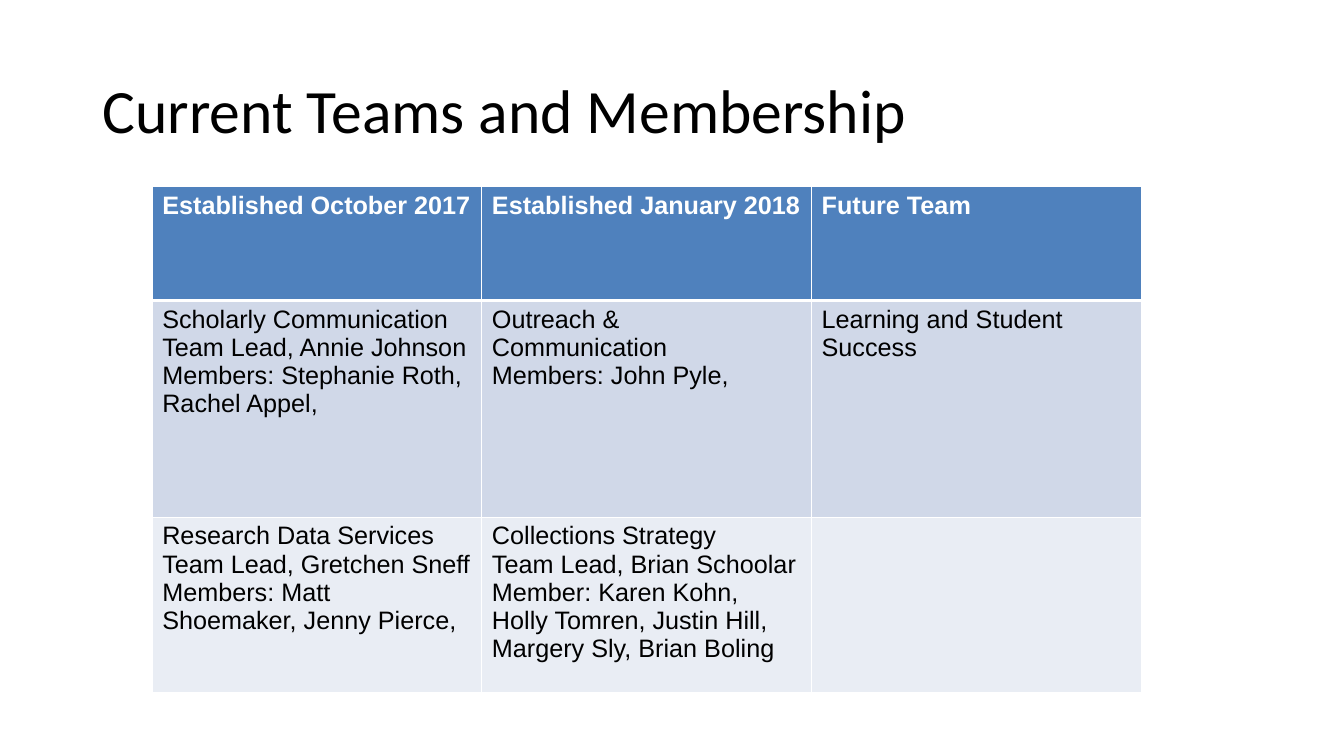
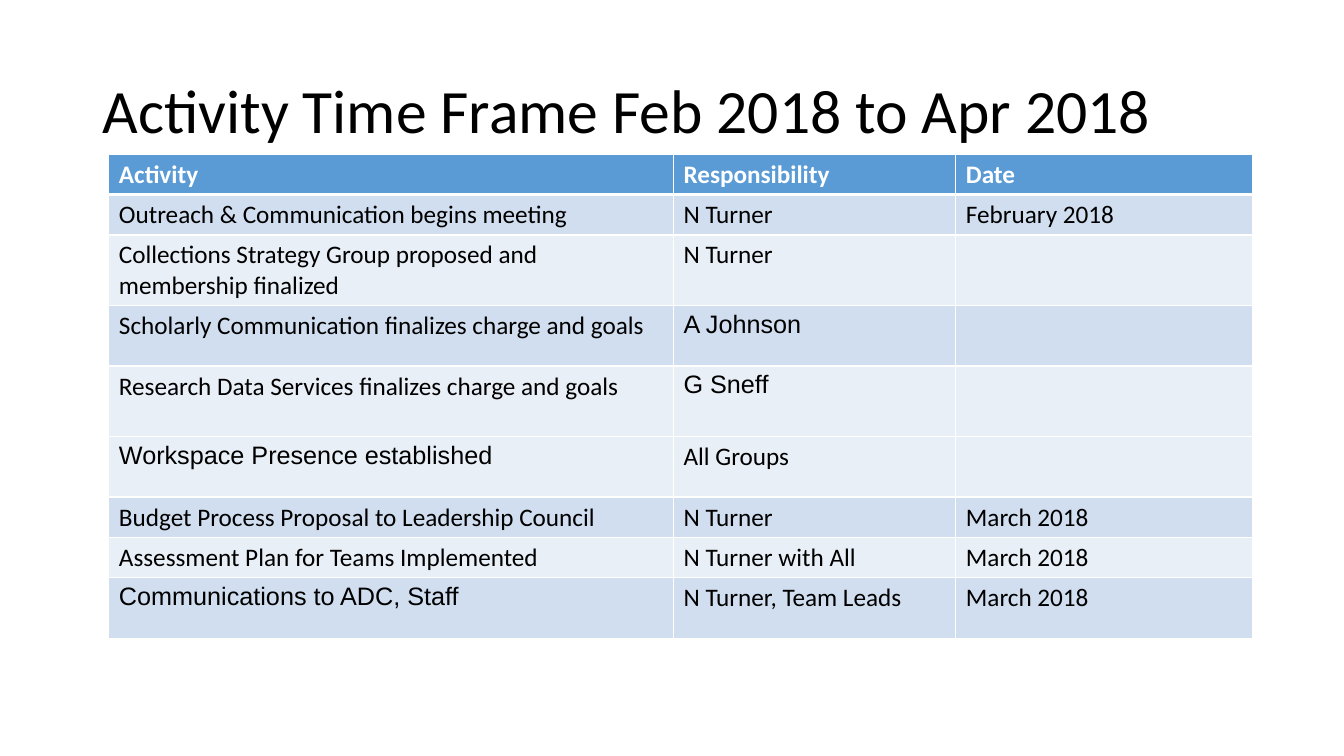
from lxml.etree import SubElement
from pptx import Presentation
from pptx.dml.color import RGBColor
from pptx.enum.text import MSO_ANCHOR
from pptx.oxml.ns import qn
from pptx.util import Pt

PX = 9144
COLORS = {
    "white": "FFFFFF",
    "black": "000000",
    "team_head": "4F81BD",
    "team_dark": "D0D8E8",
    "team_light": "E9EDF4",
    "plan_head": "5B9BD5",
    "plan_dark": "D1DEEF",
    "plan_light": "E9EFF7",
}
TITLE = {"name": "Calibri", "size": Pt(44), "bold": False}
HEAD = {"size": Pt(18), "bold": True}
BODY = {"size": Pt(18), "bold": False}

TEAMS = [
    ["Established October 2017", "Established January 2018", "Future Team"],
    [
        "Scholarly Communication\nTeam Lead, Annie Johnson\nMembers: Stephanie Roth, Rachel Appel,",
        "Outreach & Communication\nMembers: John Pyle,",
        "Learning and Student Success",
    ],
    [
        "Research Data Services\nTeam Lead, Gretchen Sneff\nMembers: Matt Shoemaker, Jenny Pierce,",
        "Collections Strategy\nTeam Lead, Brian Schoolar\n"
        "Member: Karen Kohn, Holly Tomren, Justin Hill, Margery Sly, Brian Boling",
        "",
    ],
]
PLAN = [
    ["Activity", "Responsibility", "Date"],
    ["Outreach & Communication begins meeting", "N Turner", "February 2018"],
    ["Collections Strategy Group proposed and membership finalized", "N Turner", ""],
    ["Scholarly Communication finalizes charge and goals", "A Johnson", ""],
    ["Research Data Services finalizes charge and goals", "G Sneff", ""],
    ["Workspace Presence established", "All Groups", ""],
    ["Budget Process Proposal to Leadership Council", "N Turner", "March 2018"],
    ["Assessment Plan for Teams Implemented", "N Turner with All", "March 2018"],
    ["Communications to ADC, Staff", "N Turner, Team Leads", "March 2018"],
]
PLAN_ARIAL = {(3, 1), (4, 1), (5, 0), (8, 0)}


def rgb(color):
    return RGBColor.from_string(COLORS[color])


def write(tf, text, fmt, color):
    for i, line in enumerate(text.split("\n")):
        p = tf.paragraphs[0] if i == 0 else tf.add_paragraph()
        r = p.add_run()
        r.text = line
        for key, value in fmt.items():
            setattr(r.font, key, value)
        r.font.color.rgb = rgb(color)


def add_title(s, text):
    sp = s.shapes.add_textbox(*[v * PX for v in (92, 40, 1150, 145)])
    tf = sp.text_frame
    tf.word_wrap = True
    tf.vertical_anchor = MSO_ANCHOR.MIDDLE
    write(tf, text, TITLE, "black")
    tf.paragraphs[0].line_spacing = 0.9


def add_borders(cell, row):
    thick = {0: "B", 1: "T"}.get(row)
    tcPr = cell._tc.get_or_add_tcPr()
    for side in "LRTB":
        width = Pt(3 if side == thick else 1)
        ln = SubElement(tcPr, qn(f"a:ln{side}"), w=str(width))
        fill = SubElement(ln, qn("a:solidFill"))
        SubElement(fill, qn("a:srgbClr"), val=COLORS["white"])


def add_grid(s, left, top, widths, heights, rows, fills, font, arial=()):
    frame = s.shapes.add_table(
        len(rows), len(widths), left * PX, top * PX, sum(widths) * PX, sum(heights) * PX
    )
    table = frame.table
    table.horz_banding = False
    for col, width in zip(table.columns, widths):
        col.width = width * PX
    for row, height in zip(table.rows, heights):
        row.height = height * PX
    for i, texts in enumerate(rows):
        for j, text in enumerate(texts):
            cell = table.cell(i, j)
            add_borders(cell, i)
            cell.fill.solid()
            cell.fill.fore_color.rgb = rgb(fills[i])
            if text:
                fmt = dict(BODY if i else HEAD, name="Arial" if (i, j) in arial else font)
                write(cell.text_frame, text, fmt, "black" if i else "white")


def add_slide(prs, title):
    s = prs.slides.add_slide(prs.slide_layouts[6])
    add_title(s, title)
    return s


def main():
    prs = Presentation()
    prs.slide_width, prs.slide_height = 1333 * PX, 750 * PX

    s = add_slide(prs, "Current Teams and Membership")
    add_grid(s, 151, 185, [327] * 3, [113, 215, 174], TEAMS,
             ["team_head", "team_dark", "team_light"], "Arial")

    s = add_slide(prs, "Activity Time Frame Feb 2018 to Apr 2018")
    dark, light = "plan_dark", "plan_light"
    fills = ["plan_head"] + [dark, light] * 2 + [light] + [dark, light, dark]
    add_grid(s, 108, 153, [560, 280, 294], [40, 40, 70, 60, 70, 60, 40, 40, 60],
             PLAN, fills, "Calibri", PLAN_ARIAL)

    prs.save("out.pptx")


if __name__ == "__main__":
    main()
